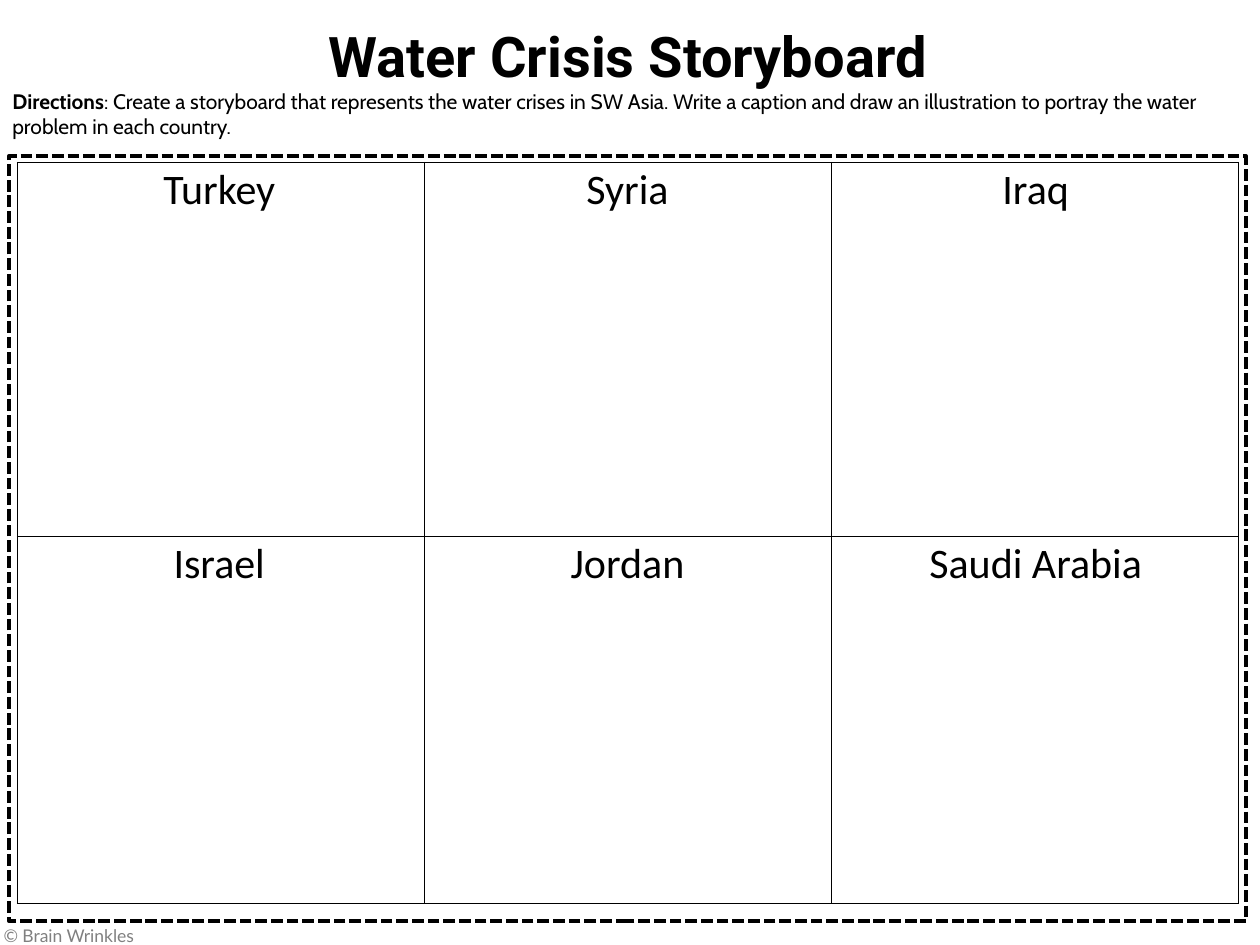
from dataclasses import dataclass

from lxml import etree
from pptx import Presentation
from pptx.dml.color import RGBColor
from pptx.enum.dml import MSO_LINE
from pptx.enum.shapes import MSO_SHAPE
from pptx.enum.text import MSO_ANCHOR, MSO_AUTO_SIZE, PP_ALIGN
from pptx.oxml.ns import qn
from pptx.util import Inches, Pt

LEFT, CENTER = PP_ALIGN.LEFT, PP_ALIGN.CENTER
TOP = MSO_ANCHOR.TOP
NO_AUTOFIT = MSO_AUTO_SIZE.NONE
RECTANGLE = MSO_SHAPE.RECTANGLE
DASHED = MSO_LINE.SQUARE_DOT
TITLE_ONLY = 5

# The slide is laid on a grid of 100 columns by 75 rows
WIDTH, HEIGHT = Inches(10), Inches(7.5)
GRID_COLUMNS, GRID_ROWS = 100, 75

COUNTRIES = [["Turkey", "Syria", "Iraq"], ["Israel", "Jordan", "Saudi Arabia"]]
DIRECTIONS = (": Create a storyboard that represents the water crises in SW Asia. "
              "Write a caption and draw an illustration to portray the water "
              "problem in each country.")


@dataclass(frozen=True)
class Theme:
    ink: str = "000000"
    muted: str = "808080"
    title_font: str = "Roboto"
    body_font: str = "Cabin"
    label_font: str = "Calibri"
    footer_font: str = "Lato"
    title_size: float = 32
    label_size: float = 24
    body_size: float = 12
    footer_size: float = 10
    cell_line: float = 1
    frame_line: float = 2.25


def add_span(para, text, *, font, size, color, bold=False):
    span = para.add_run()
    span.text = text
    span.font.name = font
    span.font.size = Pt(size)
    span.font.bold = bold
    span.font.color.rgb = RGBColor.from_string(color)


class Storyboard:
    def __init__(self, deck, theme):
        self.theme = theme
        self.slide = deck.slides.add_slide(deck.slide_layouts[TITLE_ONLY])
        self.shapes = self.slide.shapes

    def area(self, column, row, columns, rows):
        return (round(WIDTH * column / GRID_COLUMNS), round(HEIGHT * row / GRID_ROWS),
                round(WIDTH * columns / GRID_COLUMNS), round(HEIGHT * rows / GRID_ROWS))

    def title(self, text, *place):
        box = self.shapes.title
        box.left, box.top, box.width, box.height = self.area(*place)
        frame = box.text_frame
        frame.auto_size = NO_AUTOFIT
        frame.word_wrap = False
        frame.vertical_anchor = TOP
        frame.margin_left = frame.margin_right = Inches(0.07)
        frame.margin_top = frame.margin_bottom = Inches(0.04)
        para = frame.paragraphs[0]
        para.alignment = CENTER
        add_span(para, text, font=self.theme.title_font, size=self.theme.title_size,
                 color=self.theme.ink, bold=True)

    def text(self, *place, align=LEFT):
        box = self.shapes.add_textbox(*self.area(*place))
        box.text_frame.word_wrap = True
        para = box.text_frame.paragraphs[0]
        para.alignment = align
        return para

    def label(self, text, *place):
        add_span(self.text(*place, align=CENTER), text, font=self.theme.label_font,
                 size=self.theme.label_size, color=self.theme.ink)

    def table(self, row_heights, column_count, *place):
        table = self.shapes.add_table(len(row_heights), column_count,
                                      *self.area(*place)).table
        table.first_row = table.horz_banding = False
        for row, height in zip(table.rows, row_heights):
            row.height = round(HEIGHT * height / GRID_ROWS)
        for cell in table.iter_cells():
            self.outline(cell)
            cell.fill.background()

    def outline(self, cell):
        properties = cell._tc.get_or_add_tcPr()
        for side in ("a:lnL", "a:lnR", "a:lnT", "a:lnB"):
            line = etree.SubElement(properties, qn(side), w=str(Pt(self.theme.cell_line)))
            fill = etree.SubElement(line, qn("a:solidFill"))
            etree.SubElement(fill, qn("a:srgbClr"), val=self.theme.ink)

    def frame(self, *place):
        shape = self.shapes.add_shape(RECTANGLE, *self.area(*place))
        shape.shadow.inherit = False
        shape.fill.background()
        shape.line.color.rgb = RGBColor.from_string(self.theme.ink)
        shape.line.width = Pt(self.theme.frame_line)
        shape.line.dash_style = DASHED


def main():
    deck = Presentation()
    deck.slide_width, deck.slide_height = WIDTH, HEIGHT
    theme = Theme()
    board = Storyboard(deck, theme)

    # Heading and directions
    board.title("Water Crisis Storyboard", 19.6, 1.3, 60.5, 6.1)
    para = board.text(0, 6.5, 100, 5)
    for text, bold in (("Directions", True), (DIRECTIONS, False)):
        add_span(para, text, font=theme.body_font, size=theme.body_size,
                 color=theme.ink, bold=bold)

    # Panels inside a dashed frame
    row_heights = [29.7, 29.1]
    board.table(row_heights, 3, 1.4, 12.9, 96.9, sum(row_heights))
    board.frame(0.7, 12.4, 98.2, 60.7)

    # One country name at the top of each panel
    for row, names in enumerate(COUNTRIES):
        for column, name in enumerate(names):
            board.label(name, 1.3 + 32.4 * column, 12.4 + row_heights[0] * row, 32.2, 5)

    # Copyright line
    add_span(board.text(-0.7, 72.9, 29, 2.7), "© Brain Wrinkles", font=theme.footer_font,
             size=theme.footer_size, color=theme.muted)

    deck.save("out.pptx")


if __name__ == "__main__":
    main()
